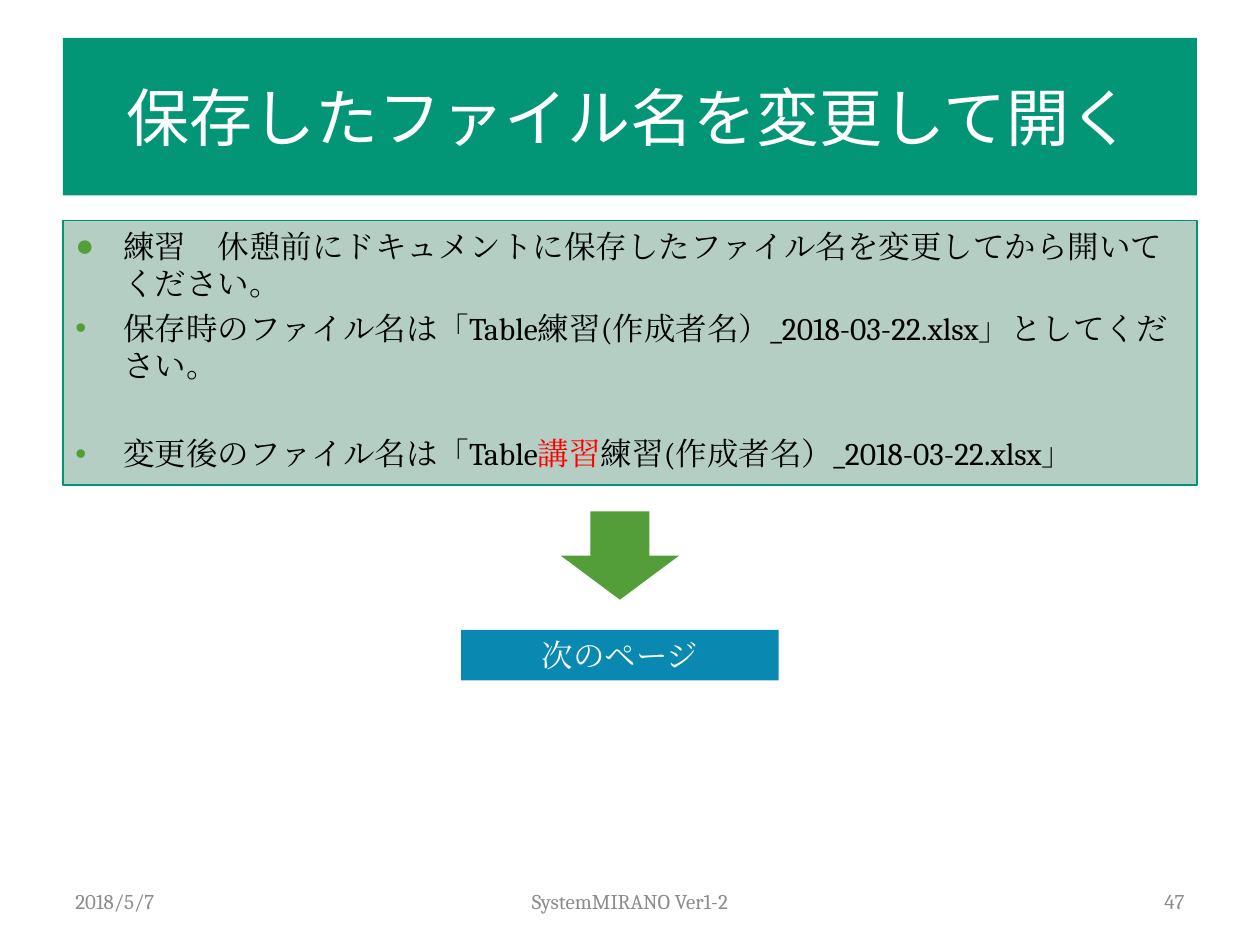
from dataclasses import dataclass

from lxml.etree import SubElement
from pptx import Presentation
from pptx.dml.color import RGBColor
from pptx.enum.shapes import MSO_SHAPE
from pptx.enum.text import MSO_ANCHOR, PP_ALIGN
from pptx.oxml.ns import qn
from pptx.util import Inches, Pt


@dataclass(frozen=True)
class Theme:
    teal: str = "029676"
    panel: str = "B4CEC4"
    panel_edge: str = "009575"
    green: str = "549E39"
    blue: str = "0989B1"
    white: str = "FFFFFF"
    black: str = "000000"
    red: str = "FF0000"
    grey: str = "8C8C8C"
    heading_font: str = "Noto Sans CJK JP"
    body_font: str = "Cambria"
    heading: int = 36
    body: int = 18
    footer: int = 12


theme = Theme()
WIDTH, HEIGHT = 10, 7.5
MARGIN = WIDTH * 0.05
CONTENT = WIDTH - 2 * MARGIN


def add_block(kind, left, top, width, height, fill):
    block = page.shapes.add_shape(
        kind, Inches(left), Inches(top), Inches(width), Inches(height))
    block.shadow.inherit = False
    block.fill.solid()
    block.fill.fore_color.rgb = RGBColor.from_string(fill)
    block.line.fill.background()
    block.text_frame.word_wrap = True
    return block


def write(para, text, size, color, font=theme.body_font, align=PP_ALIGN.LEFT):
    """Append a span whose Latin and East Asian letters share one font."""
    para.alignment = align
    span = para.add_run()
    span.text = text
    for name, value in {"size": Pt(size), "name": font}.items():
        setattr(span.font, name, value)
    span.font.color.rgb = RGBColor.from_string(color)
    SubElement(span.font._element, qn("a:ea"), typeface=font)


deck = Presentation()
deck.slide_width, deck.slide_height = Inches(WIDTH), Inches(HEIGHT)
page = deck.slides.add_slide(deck.slide_layouts[6])

# Title band
title = add_block(MSO_SHAPE.RECTANGLE, MARGIN, HEIGHT * 0.04, CONTENT, 1.25, theme.teal)
title.text_frame.vertical_anchor = MSO_ANCHOR.MIDDLE
write(title.text_frame.paragraphs[0], "保存したファイル名を変更して開く",
      theme.heading, theme.white, theme.heading_font, PP_ALIGN.CENTER)

# Exercise panel: bullet, space before in points, spans
panel = add_block(MSO_SHAPE.RECTANGLE, MARGIN, 1.75, CONTENT, 2.1, theme.panel)
panel.line.color.rgb = RGBColor.from_string(theme.panel_edge)
panel.line.width = Pt(1)
panel.text_frame.vertical_anchor = MSO_ANCHOR.TOP
steps = [
    ("●", 3.6, [("練習\u3000休憩前にドキュメントに保存したファイル名を変更してから開いてください。".replace("\u3000", "　"), theme.black)]),
    ("•", 3.6, [("保存時のファイル名は「Table練習(作成者名）_2018-03-22.xlsx」としてください。", theme.black)]),
    ("•", 28.6, [("変更後のファイル名は「Table", theme.black),
                 ("講習", theme.red),
                 ("練習(作成者名）_2018-03-22.xlsx」", theme.black)]),
]
for index, (bullet, gap, spans) in enumerate(steps):
    frame = panel.text_frame
    para = frame.add_paragraph() if index else frame.paragraphs[0]
    for text, color in spans:
        write(para, text, theme.body, color)
    para.space_before = Pt(gap)
    properties = para._p.get_or_add_pPr()
    indent = Inches(0.38)
    properties.set("marL", str(indent))
    properties.set("indent", str(-indent))
    bullet_color = SubElement(properties, qn("a:buClr"))
    SubElement(bullet_color, qn("a:srgbClr"), val=theme.green)
    SubElement(properties, qn("a:buFont"), typeface="Arial")
    SubElement(properties, qn("a:buChar"), char=bullet)

# Arrow to the next page, both centred on one axis
axis = 4.92
arrow_width, button_width = 0.94, 2.52
add_block(MSO_SHAPE.DOWN_ARROW, axis - arrow_width / 2, 4.06, arrow_width, 0.7, theme.green)
button = add_block(MSO_SHAPE.RECTANGLE, axis - button_width / 2, 5, button_width, 0.4, theme.blue)
button.text_frame.vertical_anchor = MSO_ANCHOR.TOP
write(button.text_frame.paragraphs[0], "次のページ",
      theme.body, theme.white, align=PP_ALIGN.CENTER)

# Footer
side, middle = 2.33, 3.17
footers = [
    ("2018/5/7", MARGIN, side, PP_ALIGN.LEFT),
    ("SystemMIRANO Ver1-2", (WIDTH - middle) / 2, middle, PP_ALIGN.CENTER),
    ("47", WIDTH - MARGIN - side, side, PP_ALIGN.RIGHT),
]
for text, left, width, align in footers:
    box = page.shapes.add_textbox(Inches(left), Inches(6.95), Inches(width), Inches(0.4))
    box.text_frame.word_wrap = True
    box.text_frame.vertical_anchor = MSO_ANCHOR.MIDDLE
    write(box.text_frame.paragraphs[0], text, theme.footer, theme.grey, align=align)

deck.save("out.pptx")
